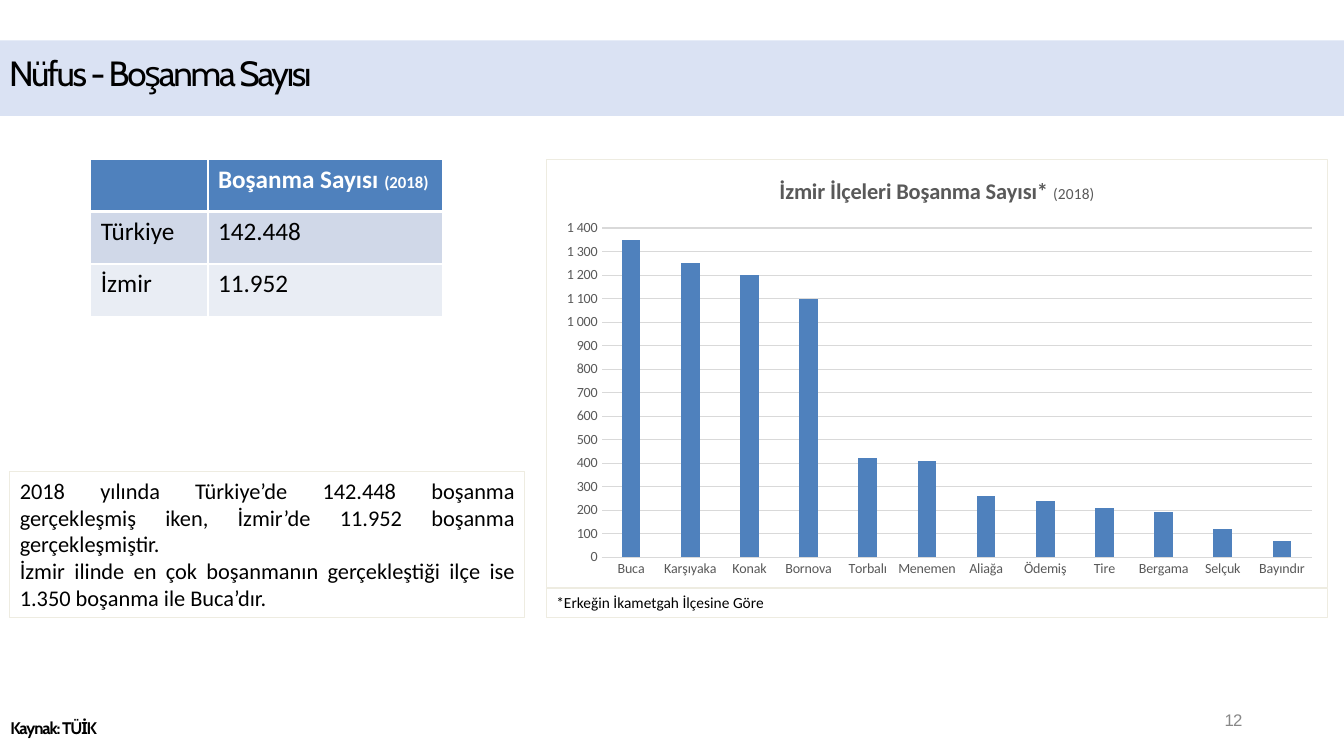
from lxml import etree
from pptx import Presentation
from pptx import util as u
from pptx.chart.data import CategoryChartData
from pptx.dml.color import RGBColor
from pptx.enum import chart as charts, shapes, text
from pptx.oxml import parse_xml
from pptx.oxml.ns import nsdecls, qn

BLUE, PALE, GREY, GRID, WHITE, BLACK = "4F81BD", "EEECE1", "595959", "D9D9D9", "FFFFFF", "000000"
LEFT, JUSTIFY = text.PP_ALIGN.LEFT, text.PP_ALIGN.JUSTIFY
NO_INSETS = dict(margin_left=0, margin_top=0, margin_right=0, margin_bottom=0)

DIVORCES = {
    "Buca": 1350, "Karşıyaka": 1250, "Konak": 1200, "Bornova": 1100,
    "Torbalı": 420, "Menemen": 410, "Aliağa": 260, "Ödemiş": 240,
    "Tire": 210, "Bergama": 190, "Selçuk": 120, "Bayındır": 70,
}


def color(code):
    return RGBColor.from_string(code)


def set_values(target, **values):
    for name, value in values.items():
        setattr(target, name, value)


def set_font(font, size, code=BLACK, bold=False, name="Calibri"):
    set_values(font, size=u.Pt(size), bold=bold, name=name)
    font.color.rgb = color(code)


def set_line(line, code, width=0.75):
    line.color.rgb = color(code)
    line.width = u.Pt(width)


def add_span(para, words, size, code=BLACK, bold=False, name="Calibri", spacing=0):
    """Add a run; spacing is the letter spacing in points."""
    span = para.add_run()
    span.text = words
    set_font(span.font, size, code, bold, name)
    if spacing:
        span.font._element.set("spc", str(round(spacing * 100)))


def add_band(page, width):
    band = page.shapes.add_shape(shapes.MSO_SHAPE.RECTANGLE, 0, u.Cm(1.02), width, u.Cm(1.9))
    band.shadow.inherit = False
    band.fill.solid()
    band.fill.fore_color.rgb = color("DAE2F3")
    band.line.fill.background()
    page.shapes._spTree.insert(2, band._element)


def fill_title(page):
    title = page.shapes.title
    set_values(title, left=u.Cm(0.23), top=u.Cm(1.3), width=u.Cm(9.63), height=u.Cm(1.12))
    set_values(title.text_frame, **NO_INSETS, vertical_anchor=text.MSO_ANCHOR.TOP,
               auto_size=text.MSO_AUTO_SIZE.NONE, word_wrap=True)
    para = title.text_frame.paragraphs[0]
    para.alignment = LEFT
    add_span(para, "Nüfus - Boşanma Sayısı", 25, name="Cabin", spacing=-1.6)


def add_label(page, left, top, width, words, **style):
    """Add a one-line footer text without insets."""
    box = page.shapes.add_textbox(u.Cm(left), u.Cm(top), u.Cm(width), u.Cm(0.48))
    set_values(box.text_frame, **NO_INSETS, word_wrap=True)
    para = box.text_frame.paragraphs[0]
    para.line_spacing = u.Pt(12.4)
    add_span(para, words, 12, **style)


def add_framed_text(page, left, top, width, height, lines, size, alignment=LEFT):
    box = page.shapes.add_shape(shapes.MSO_SHAPE.RECTANGLE,
                                u.Cm(left), u.Cm(top), u.Cm(width), u.Cm(height))
    box.shadow.inherit = False
    box.fill.background()
    set_line(box.line, PALE)
    frame = box.text_frame
    set_values(frame, word_wrap=True, vertical_anchor=text.MSO_ANCHOR.TOP)
    for index, words in enumerate(lines):
        para = frame.add_paragraph() if index else frame.paragraphs[0]
        para.alignment = alignment
        add_span(para, words, size)


def set_cell_borders(cell, bottom):
    widths = {"lnL": 1, "lnR": 1, "lnT": 1, "lnB": bottom}
    for side, width in widths.items():
        cell._tc.get_or_add_tcPr().append(parse_xml(
            f'<a:{side} {nsdecls("a")} w="{u.Pt(width)}"><a:solidFill>'
            f'<a:srgbClr val="{WHITE}"/></a:solidFill></a:{side}>'))


def add_divorce_table(page):
    rows = [
        (BLUE, "", "Boşanma Sayısı "),
        ("D0D8E8", "Türkiye", "142.448"),
        ("E9EDF4", "İzmir", "11.952"),
    ]
    table = page.shapes.add_table(len(rows), 2, u.Cm(2.29), u.Cm(4.01),
                                  u.Cm(8.87), u.Cm(3.96)).table
    for column, width in zip(table.columns, (2.95, 5.92)):
        column.width = u.Cm(width)
    for index, (fill, *words) in enumerate(rows):
        header = index == 0
        table.rows[index].height = u.Cm(1.32)
        for cell, value in zip(table.rows[index].cells, words):
            set_cell_borders(cell, 3 if header else 1)
            cell.fill.solid()
            cell.fill.fore_color.rgb = color(fill)
            if value:
                add_span(cell.text_frame.paragraphs[0], value, 18,
                         WHITE if header else BLACK, header)
    add_span(table.cell(0, 1).text_frame.paragraphs[0], "(2018)", 12, WHITE, True)


def set_chart_border(chart):
    border = parse_xml(
        f'<c:spPr {nsdecls("c", "a")}><a:noFill/><a:ln w="{u.Pt(0.75)}"><a:solidFill>'
        f'<a:srgbClr val="{PALE}"/></a:solidFill></a:ln></c:spPr>')
    chart._chartSpace.find(qn("c:chart")).addnext(border)


def set_plot_layout(chart, **portions):
    """Place the inner plot area by portions of the chart's size."""
    area = chart._chartSpace.find(qn("c:chart")).find(qn("c:plotArea"))
    layout = area.find(qn("c:layout"))
    if layout is None:
        layout = etree.Element(qn("c:layout"))
        area.insert(0, layout)
    manual = etree.SubElement(layout, qn("c:manualLayout"))
    settings = dict(layoutTarget="inner", xMode="edge", yMode="edge", **portions)
    for name, value in settings.items():
        etree.SubElement(manual, qn(f"c:{name}")).set("val", str(value))


def add_district_chart(page):
    data = CategoryChartData()
    data.categories = list(DIVORCES)
    data.add_series("Boşanma Sayısı", list(DIVORCES.values()))
    chart = page.shapes.add_chart(charts.XL_CHART_TYPE.COLUMN_CLUSTERED, u.Cm(13.77), u.Cm(4.01),
                                  u.Cm(19.69), u.Cm(10.8), data).chart
    set_font(chart.font, 10, GREY)
    chart.has_legend = False
    chart.has_title = True
    chart.chart_title.include_in_layout = False
    para = chart.chart_title.text_frame.paragraphs[0]
    add_span(para, "İzmir İlçeleri Boşanma Sayısı* ", 16, GREY, True)
    add_span(para, "(2018)", 11, GREY)

    plot = chart.plots[0]
    set_values(plot, gap_width=219, overlap=-27, vary_by_categories=False)
    fill = plot.series[0].format.fill
    fill.solid()
    fill.fore_color.rgb = color(BLUE)

    values, districts = chart.value_axis, chart.category_axis
    set_values(values, minimum_scale=0, maximum_scale=1400, major_unit=100)
    set_values(values.tick_labels, number_format=r"##\ ###\ ##0", number_format_is_linked=False)
    set_line(values.major_gridlines.format.line, GRID)
    values.format.line.fill.background()
    set_line(districts.format.line, GRID)
    for axis in (values, districts):
        axis.major_tick_mark = charts.XL_TICK_MARK.NONE
        set_font(axis.tick_labels.font, 10, GREY)
    set_chart_border(chart)
    set_plot_layout(chart, x=0.07, y=0.16, w=0.91, h=0.77)


def main():
    deck = Presentation()
    set_values(deck, slide_width=u.Cm(33.87), slide_height=u.Cm(19.05))
    page = deck.slides.add_slide(deck.slide_layouts[5])
    add_band(page, deck.slide_width)
    fill_title(page)
    add_label(page, 30.86, 17.96, 0.6, "12", code="888888", name="Arial", spacing=-0.6)
    add_label(page, 0.26, 18.16, 2.5, "Kaynak: TÜİK", bold=True, name="Cabin", spacing=-0.8)
    add_district_chart(page)
    add_framed_text(page, 13.77, 14.83, 19.69, 0.74, ["*Erkeğin İkametgah İlçesine Göre"], 11)
    add_divorce_table(page)
    add_framed_text(page, 0.25, 11.89, 12.98, 3.68, [
        "2018 yılında Türkiye’de 142.448 boşanma gerçekleşmiş iken, "
        "İzmir’de 11.952 boşanma gerçekleşmiştir.",
        "İzmir ilinde en çok boşanmanın gerçekleştiği ilçe ise 1.350 boşanma ile Buca’dır.",
    ], 16, JUSTIFY)
    deck.save("out.pptx")


if __name__ == "__main__":
    main()
